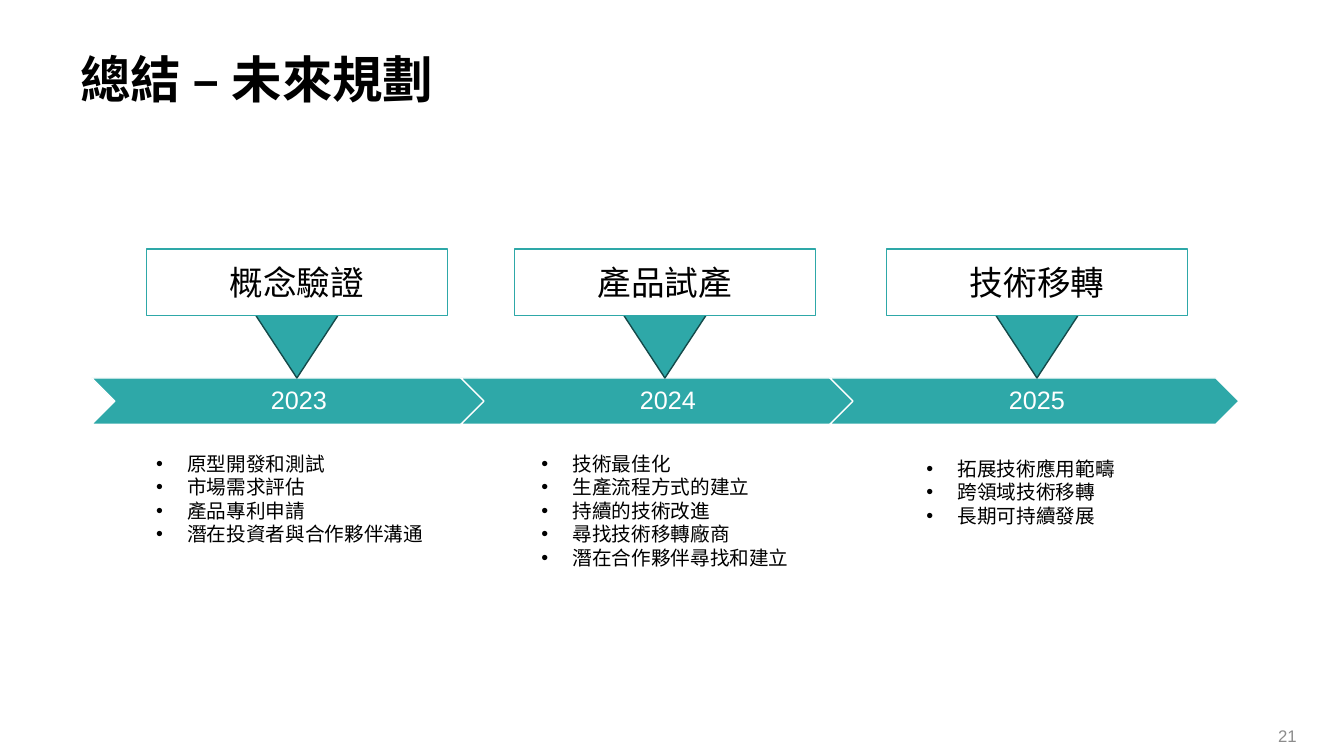
from lxml import etree
from pptx import Presentation
from pptx.dml.color import RGBColor
from pptx.enum.shapes import MSO_SHAPE
from pptx.enum.text import MSO_ANCHOR, PP_ALIGN
from pptx.oxml.ns import qn
from pptx.util import Inches, Pt

TEAL = RGBColor(0x2E, 0xA8, 0xA8)
DARK_TEAL = RGBColor(0x14, 0x4A, 0x4A)
WHITE = RGBColor(0xFF, 0xFF, 0xFF)
BLACK = RGBColor(0, 0, 0)
GRAY = RGBColor(0x8C, 0x8C, 0x8C)

CHEVRON, MERGE, RECTANGLE = (
    MSO_SHAPE.CHEVRON, MSO_SHAPE.FLOWCHART_MERGE, MSO_SHAPE.RECTANGLE)
LEFT, CENTER, RIGHT = PP_ALIGN.LEFT, PP_ALIGN.CENTER, PP_ALIGN.RIGHT
TOP, MIDDLE = MSO_ANCHOR.TOP, MSO_ANCHOR.MIDDLE

CHEVRON_LEFT, CHEVRON_STEP = 0.91, 3.66
LABEL_WIDTH, POINTER_WIDTH = 2.99, 1.47

# year, label, label left, list (left, top, width, height), list items
PHASES = [
    ("2023", "概念驗證", 1.45, (1.45, 4.43, 2.87, 1.04),
     ["原型開發和測試", "市場需求評估", "產品專利申請", "潛在投資者與合作夥伴溝通"]),
    ("2024", "產品試產", 5.1, (5.27, 4.43, 2.98, 1.51),
     ["技術最佳化", "生產流程方式的建立", "持續的技術改進", "尋找技術移轉廠商",
      "潛在合作夥伴尋找和建立"]),
    ("2025", "技術移轉", 8.79, (9.09, 4.48, 2.79, 0.81),
     ["拓展技術應用範疇", "跨領域技術移轉", "長期可持續發展"]),
]


def add_bullet(para):
    props = para._p.get_or_add_pPr()
    props.set("marL", str(Inches(0.31)))
    props.set("indent", str(-Inches(0.31)))
    etree.SubElement(props, qn("a:buFont")).set("typeface", "Arial")
    etree.SubElement(props, qn("a:buChar")).set("char", "•")


def write(shape, lines, size, color, align=LEFT, anchor=MIDDLE,
          bold=False, bullets=False):
    frame = shape.text_frame
    frame.word_wrap = True
    frame.vertical_anchor = anchor
    for index, line in enumerate(lines):
        para = frame.add_paragraph() if index else frame.paragraphs[0]
        para.alignment = align
        if bullets:
            add_bullet(para)
        span = para.add_run()
        span.text = line
        span.font.name = "Arial"
        span.font.size = Pt(size)
        span.font.bold = bold
        span.font.color.rgb = color


def add_text(page, place, lines, size, color, **style):
    box = page.shapes.add_textbox(*map(Inches, place))
    write(box, lines, size, color, **style)


def add_shape(page, kind, place, fill, line):
    shape = page.shapes.add_shape(kind, *map(Inches, place))
    shape.shadow.inherit = False
    shape.fill.solid()
    shape.fill.fore_color.rgb = fill
    shape.line.color.rgb = line
    shape.line.width = Pt(1)
    return shape


def add_year(page, index, year):
    left = CHEVRON_LEFT + index * CHEVRON_STEP
    chevron = add_shape(page, CHEVRON, (left, 3.75, 4.06, 0.46), TEAL, WHITE)
    write(chevron, [year], 18, WHITE, align=CENTER)
    frame = chevron.text_frame
    frame.margin_left = Inches(0.08)
    frame.margin_right = frame.margin_top = frame.margin_bottom = Inches(0.03)
    frame.paragraphs[0].line_spacing = 0.9


def add_label(page, left, label):
    pointer_left = left + (LABEL_WIDTH - POINTER_WIDTH) / 2
    add_shape(page, MERGE, (pointer_left, 2.63, POINTER_WIDTH, 1.12),
              TEAL, DARK_TEAL)
    box = add_shape(page, RECTANGLE, (left, 2.47, LABEL_WIDTH, 0.66),
                    WHITE, TEAL)
    write(box, [label], 24, BLACK, align=CENTER)


def main():
    deck = Presentation()
    deck.slide_width, deck.slide_height = Inches(13.33), Inches(7.5)
    page = deck.slides.add_slide(deck.slide_layouts[6])

    # Title and page number
    add_text(page, (0.7, 0.4, 12.27, 0.76), ["總結 – 未來規劃"], 36, BLACK,
             bold=True)
    add_text(page, (11.6, 7.1, 1.36, 0.4), ["21"], 12, GRAY, align=RIGHT)

    # Timeline phases
    for index, (year, label, label_left, place, items) in enumerate(PHASES):
        add_year(page, index, year)
        add_label(page, label_left, label)
        add_text(page, place, items, 14, BLACK, anchor=TOP, bullets=True)

    deck.save("out.pptx")


if __name__ == "__main__":
    main()
